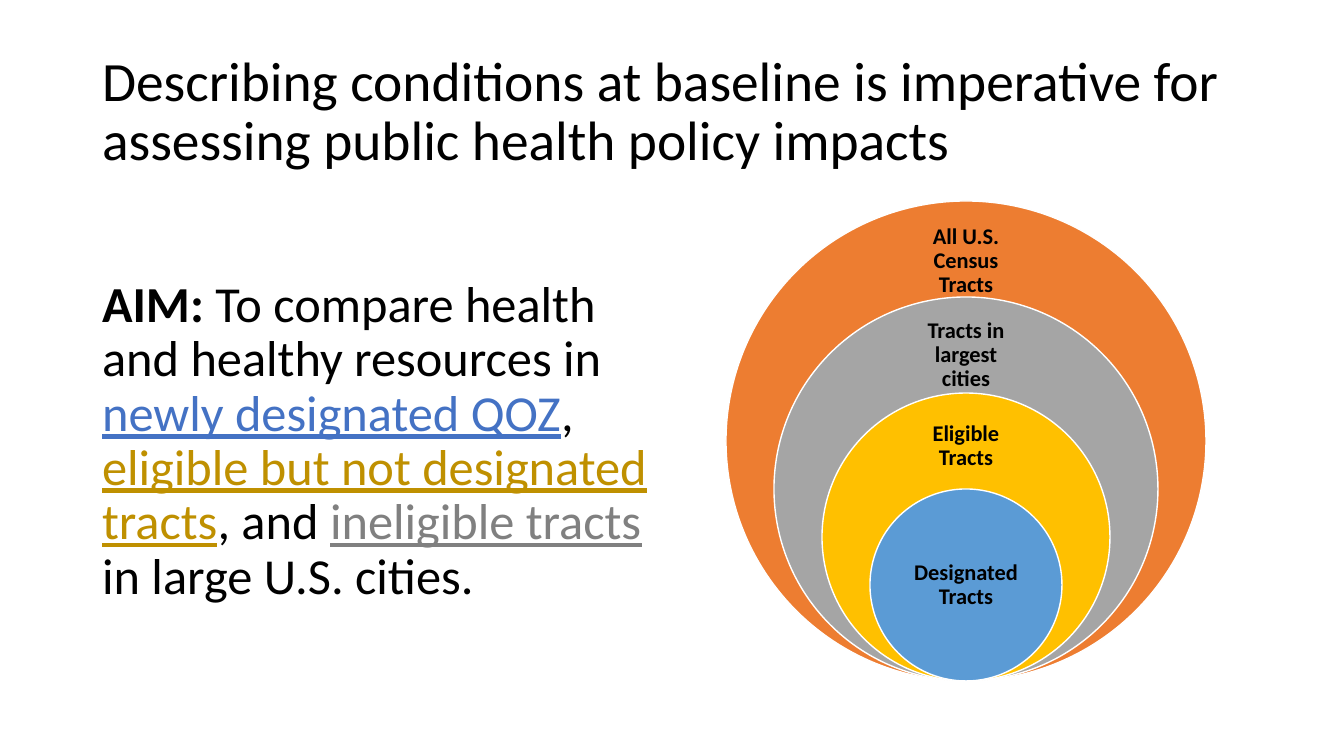
from pptx import Presentation
from pptx.dml.color import RGBColor
from pptx.enum.shapes import MSO_SHAPE
from pptx.enum.text import MSO_ANCHOR, MSO_AUTO_SIZE, PP_ALIGN
from pptx.oxml.xmlchemy import OxmlElement
from pptx.util import Pt

EMU_PER_PX = 914400 / 100.8

BLACK = RGBColor(0x00, 0x00, 0x00)
WHITE = RGBColor(0xFF, 0xFF, 0xFF)
BLUE = RGBColor(0x44, 0x72, 0xC4)
DARK_GOLD = RGBColor(0xBF, 0x90, 0x00)
DARK_GRAY = RGBColor(0x80, 0x80, 0x80)
ORANGE = RGBColor(0xED, 0x7D, 0x31)
GRAY = RGBColor(0xA5, 0xA5, 0xA5)
GOLD = RGBColor(0xFF, 0xC0, 0x00)
LIGHT_BLUE = RGBColor(0x5B, 0x9B, 0xD5)


def px(n):
    return round(n * EMU_PER_PX)


def set_attrs(obj, values):
    for name, value in values.items():
        setattr(obj, name, value)


class SlideBuilder:
    font = "Calibri"
    frame = {
        "word_wrap": True,
        "auto_size": MSO_AUTO_SIZE.NONE,
        "vertical_anchor": MSO_ANCHOR.MIDDLE,
    }

    def __init__(self, slide):
        self.slide = slide

    def add_text(self, tf, runs, size, **para):
        set_attrs(tf, self.frame)
        p = tf.paragraphs[0]
        set_attrs(p, {"line_spacing": 0.9, **para})
        for text, color, style in runs:
            r = p.add_run()
            r.text = text
            set_attrs(r.font, {"name": self.font, "size": Pt(size), **style})
            r.font.color.rgb = color
        return p

    def place(self, sp, box):
        set_attrs(sp, dict(zip(("left", "top", "width", "height"), map(px, box))))

    def title(self, box, text):
        sp = self.slide.shapes.title
        self.place(sp, box)
        self.add_text(sp.text_frame, [(text, BLACK, {})], 39.6, alignment=PP_ALIGN.LEFT)

    def body(self, box, runs):
        sp = self.slide.placeholders[1]
        self.place(sp, box)
        p = self.add_text(sp.text_frame, runs, 36, space_before=Pt(10))
        pPr = p._p.get_or_add_pPr()
        pPr.set("marL", "0")
        pPr.set("indent", "0")
        pPr.append(OxmlElement("a:buNone"))

    def circle(self, center, bottom, diameter, color):
        box = (center - diameter // 2, bottom - diameter, diameter, diameter)
        sp = self.slide.shapes.add_shape(MSO_SHAPE.OVAL, *map(px, box))
        sp.shadow.inherit = False
        sp.fill.solid()
        sp.fill.fore_color.rgb = color
        sp.line.color.rgb = WHITE
        sp.line.width = Pt(1)

    def label(self, center, top, width, height, text):
        box = (center - width // 2, top, width, height)
        tf = self.slide.shapes.add_textbox(*map(px, box)).text_frame
        sides = ("left", "top", "right", "bottom")
        set_attrs(tf, {f"margin_{side}": px(12) for side in sides})
        self.add_text(tf, [(text, BLACK, {"bold": True})], 16, alignment=PP_ALIGN.CENTER)


def main():
    prs = Presentation()
    prs.slide_width, prs.slide_height = px(1344), px(756)
    s = SlideBuilder(prs.slides.add_slide(prs.slide_layouts[1]))

    s.title(
        (92, 40, 1159, 146),
        "Describing conditions at baseline is imperative for "
        "assessing public health policy impacts",
    )
    underlined = {"underline": True}
    s.body(
        (92, 202, 572, 480),
        [
            ("AIM: ", BLACK, {"bold": True}),
            ("To compare health and healthy resources in ", BLACK, {}),
            ("newly designated QOZ", BLUE, underlined),
            (", ", BLACK, {}),
            ("eligible but not designated tracts", DARK_GOLD, underlined),
            (", and ", BLACK, {}),
            ("ineligible tracts", DARK_GRAY, underlined),
            (" in large U.S. cities.", BLACK, {}),
        ],
    )

    center, bottom, step = 966, 681, 96
    rings = [
        (ORANGE, "All U.S. Census Tracts", 225, 134, 72),
        (GRAY, "Tracts in largest cities", 320, 134, 70),
        (GOLD, "Eligible Tracts", 414, 134, 65),
        (LIGHT_BLUE, "Designated Tracts", 537, 136, 96),
    ]
    for i, (color, text, top, width, height) in enumerate(rings):
        s.circle(center, bottom, step * (5 - i), color)
        s.label(center, top, width, height, text)

    prs.save("out.pptx")


if __name__ == "__main__":
    main()
